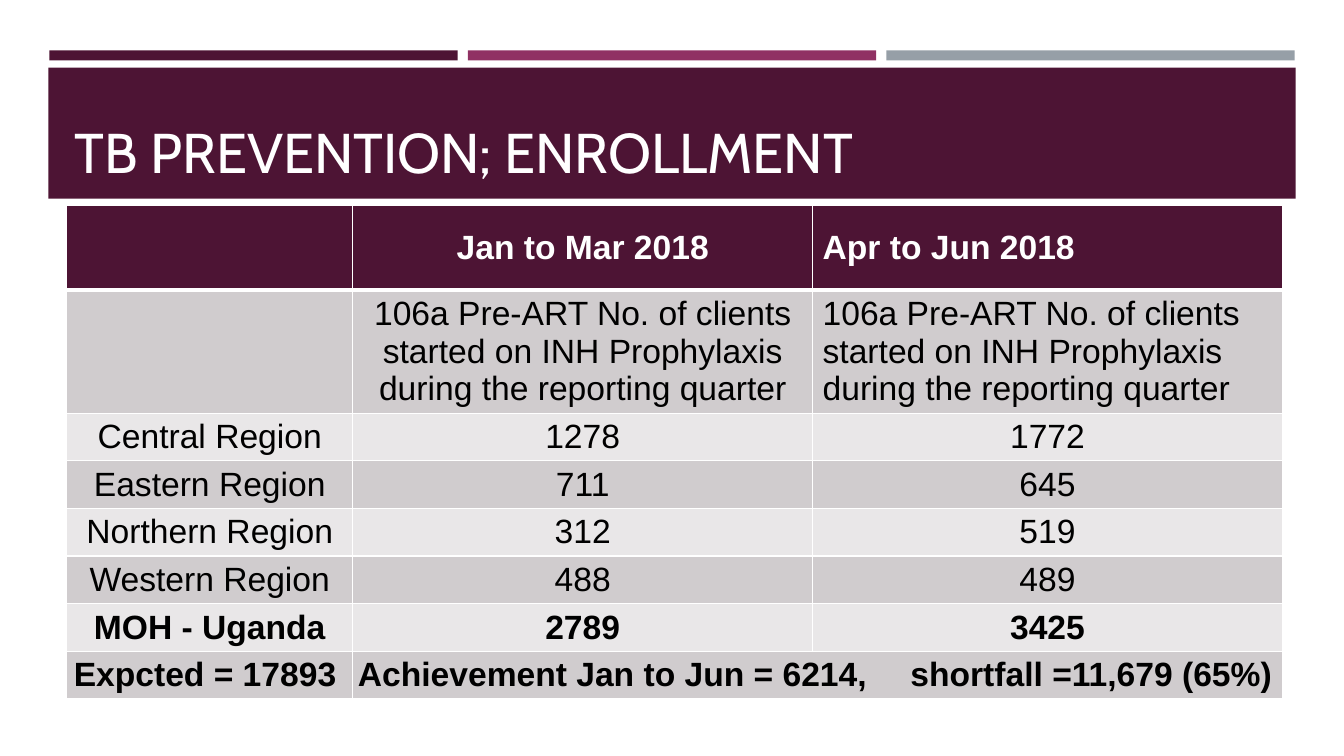
import pptx
import pptx.util
import pptx.oxml
import pptx.oxml.ns
import pptx.dml.color
import pptx.enum.text
import pptx.enum.shapes
import lxml.etree

Inches = pptx.util.Inches
Pt = pptx.util.Pt
ALIGN = pptx.enum.text.PP_ALIGN
ANCHOR = pptx.enum.text.MSO_ANCHOR
PLUM, ROSE, GREY = "4D1434", "903163", "969FA7"
DARK, LIGHT, WHITE, BLACK = "D0CCCE", "E9E7E8", "FFFFFF", "000000"

CLIENTS = ("106a Pre-ART No. of clients started on INH Prophylaxis "
           "during the reporting quarter")
ROWS = [
    ["", "Jan to Mar 2018", "Apr to Jun 2018"],
    ["", CLIENTS, CLIENTS],
    ["Central Region", "1278", "1772"],
    ["Eastern Region", "711", "645"],
    ["Northern Region", "312", "519"],
    ["Western Region", "488", "489"],
    ["MOH - Uganda", "2789", "3425"],
    ["Expcted = 17893 ", "Achievement Jan to Jun = 6214,\tshortfall =11,679 (65%)", ""],
]
WIDTHS = [2.84, 4.56, 4.66]
HEIGHTS = [0.84, 1.22] + [0.47] * 6
BOLD = {0, 6, 7}


def color(code):
    return pptx.dml.color.RGBColor.from_string(code)


def apply(item, values):
    for name, value in values.items():
        setattr(item, name, value)


def paint(item, code):
    item.fill.solid()
    item.fill.fore_color.rgb = color(code)


def style(font, size, face, code, bold=False):
    apply(font, {"size": Pt(size), "name": face, "bold": bold})
    font.color.rgb = color(code)


def add_bar(slide, left, top, width, height, code):
    bar = slide.shapes.add_shape(
        pptx.enum.shapes.MSO_SHAPE.RECTANGLE,
        Inches(left), Inches(top), Inches(width), Inches(height))
    bar.shadow.inherit = False
    paint(bar, code)
    bar.line.fill.background()


def set_title(slide, text):
    title = slide.shapes.title
    apply(title, {"left": Inches(0.64), "top": Inches(0.77),
                  "width": Inches(12.06), "height": Inches(1.11)})
    frame = title.text_frame
    frame.text = text
    apply(frame, {"vertical_anchor": ANCHOR.BOTTOM, "word_wrap": True,
                  "auto_size": pptx.enum.text.MSO_AUTO_SIZE.NONE})
    line = frame.paragraphs[0]
    line.alignment = ALIGN.LEFT
    style(line.runs[0].font, 40, "Cabin", WHITE)
    title.element.getparent().append(title.element)


def add_edge(cell, side, width):
    props = cell._tc.get_or_add_tcPr()
    edge = lxml.etree.SubElement(
        props, pptx.oxml.ns.qn(f"a:ln{side}"), w=str(Pt(width)))
    fill = lxml.etree.SubElement(edge, pptx.oxml.ns.qn("a:solidFill"))
    lxml.etree.SubElement(fill, pptx.oxml.ns.qn("a:srgbClr"), val=WHITE)


def add_tab(line, place):
    stops = lxml.etree.SubElement(
        line._p.get_or_add_pPr(), pptx.oxml.ns.qn("a:tabLst"))
    lxml.etree.SubElement(stops, pptx.oxml.ns.qn("a:tab"),
                          pos=str(Inches(place)), algn="l")


def fill_cell(cell, text, row, col):
    head = row == 0
    left = row < 2 and col == 2
    for side in "LRTB":
        thick = (head and side == "B") or (row == 1 and side == "T")
        add_edge(cell, side, 3 if thick else 1)
    paint(cell, PLUM if head else DARK if row % 2 else LIGHT)
    side = Inches(0.1 if left else 0.05)
    apply(cell, {"margin_left": side, "margin_right": side,
                 "margin_top": Inches(0.05), "margin_bottom": Inches(0.05),
                 "vertical_anchor": ANCHOR.TOP if left and not head else ANCHOR.MIDDLE})
    cell.text = text
    line = cell.text_frame.paragraphs[0]
    line.alignment = ALIGN.LEFT if left or "\t" in text else ALIGN.CENTER
    style(line.font, 24, "Arial", WHITE if head else BLACK, row in BOLD)
    for run in line.runs:
        style(run.font, 24, "Arial", WHITE if head else BLACK, row in BOLD)
    if "\t" in text:
        add_tab(line, 5.48)


def add_grid(slide):
    frame = slide.shapes.add_table(
        len(ROWS), len(WIDTHS), Inches(0.66), Inches(2.04),
        Inches(sum(WIDTHS)), Inches(sum(HEIGHTS)))
    table = frame.table
    for col, width in zip(table.columns, WIDTHS):
        col.width = Inches(width)
    for row, height in zip(table.rows, HEIGHTS):
        row.height = Inches(height)
    for row, texts in enumerate(ROWS):
        for col, text in enumerate(texts):
            fill_cell(table.cell(row, col), text, row, col)
    last = len(ROWS) - 1
    table.cell(last, 1).merge(table.cell(last, 2))


def main():
    deck = pptx.Presentation()
    apply(deck, {"slide_width": Inches(13.33), "slide_height": Inches(7.5)})
    slide = deck.slides.add_slide(deck.slide_layouts[5])
    for step, code in enumerate([PLUM, ROSE, GREY]):
        add_bar(slide, 0.49 + 4.15 * step, 0.5, 4.05, 0.1, code)
    add_bar(slide, 0.48, 0.67, 12.37, 1.3, PLUM)
    set_title(slide, "TB PREVENTION; ENROLLMENT")
    add_grid(slide)
    deck.save("out.pptx")


if __name__ == "__main__":
    main()
